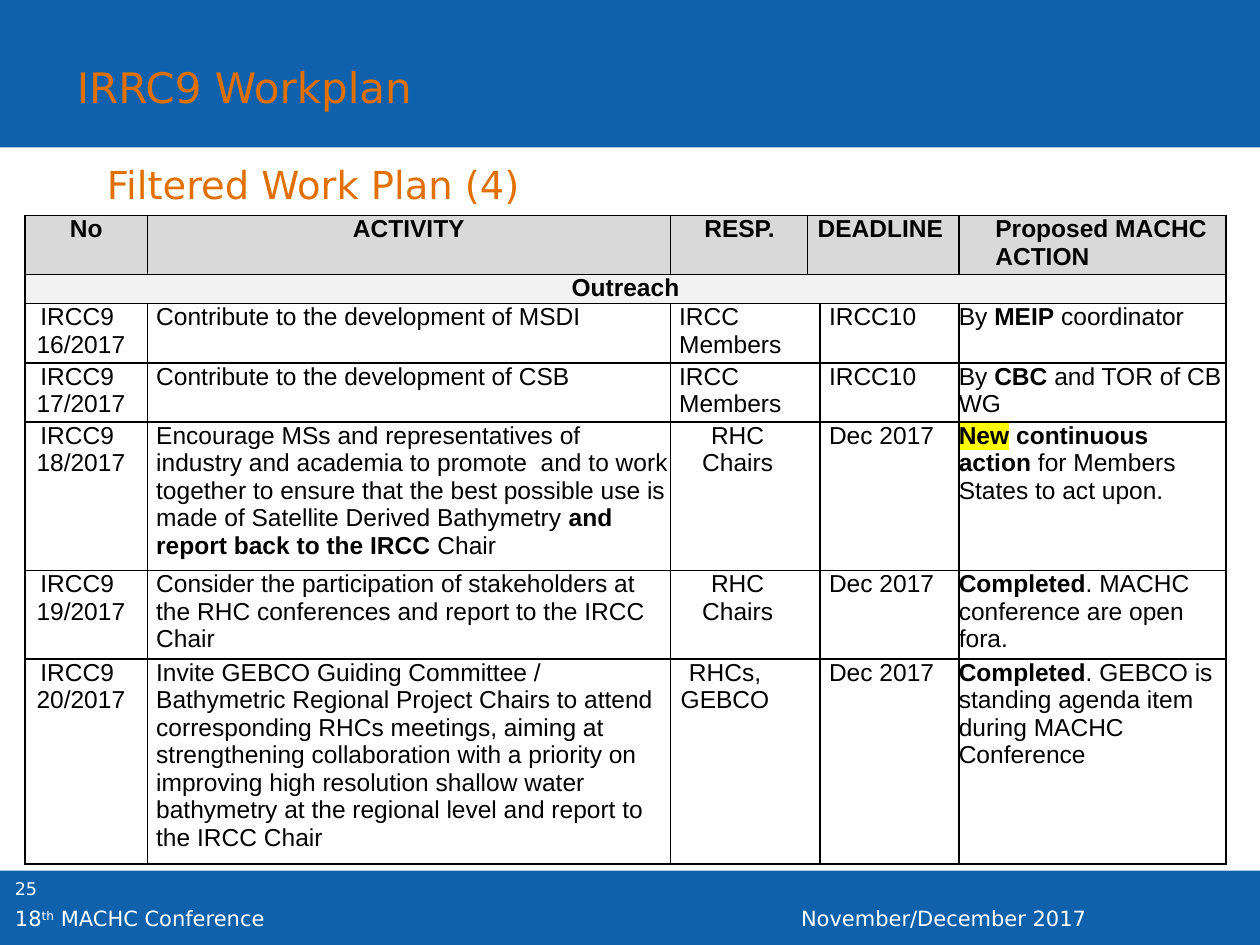
from lxml.etree import SubElement
from pptx import Presentation
from pptx.dml.color import RGBColor
from pptx.enum.shapes import MSO_SHAPE as Shape
from pptx.enum.text import MSO_ANCHOR as Anchor, PP_ALIGN as Align
from pptx.oxml.ns import qn
from pptx.util import Inches, Pt

BLUE, ORANGE, WHITE, BLACK = "0E61AA", "E17000", "FFFFFF", "000000"
GREY, PALE, YELLOW = "D9D9D9", "F2F2F2", "FFFF00"
HEAD, BODY = "DejaVu Sans", "Arial"

# Paragraph layouts: alignment, left margin, first-line indent, right margin
MID = (Align.CENTER, 0, 0, 0)
PLAIN = (Align.LEFT, 0, 0, 0)
NUM = (Align.LEFT, 0.09, 0.03, 0)
TEXT = (Align.LEFT, 0.07, 0, 0)
CHAIRS = (Align.CENTER, 0.05, 0, 0.17)
GEBCO = (Align.CENTER, 0.07, 0, 0.39)

COLS = [0.97, 4.15, 1.09, 0.1, 1.1, 2.12]
ROWS = [0.47, 0.23, 0.47, 0.47, 1.18, 0.7, 1.63]
HEADS = [
    (0, 0, "No", MID),
    (1, 1, "ACTIVITY", MID),
    (2, 2, "RESP.", (Align.LEFT, 0.27, 0, 0)),
    (3, 4, "DEADLINE", (Align.LEFT, 0.08, 0, 0)),
    (5, 5, "Proposed MACHC ACTION", (Align.LEFT, 0.29, 0, 0)),
]
# Number, activity runs, responsible paragraphs, their layout, deadline, action runs;
# a run is its text and its marks: b for bold, h for highlight
TASKS = [
    ("16", [("Contribute to the development of MSDI", "")],
     ["IRCC", "Members"], TEXT, "IRCC10",
     [("By ", ""), ("MEIP", "b"), (" coordinator", "")]),
    ("17", [("Contribute to the development of CSB", "")],
     ["IRCC", "Members"], TEXT, "IRCC10",
     [("By", ""), (" CBC", "b"), (" and TOR of CB WG", "")]),
    ("18", [("Encourage MSs and representatives of industry and academia to "
             "promote  and to work together to ensure that the best possible "
             "use is made of Satellite Derived Bathymetry ", ""),
            ("and report back to the IRCC ", "b"), ("Chair", "")],
     ["RHC Chairs"], CHAIRS, "Dec 2017",
     [("New", "bh"), (" ", ""), ("continuous action", "b"),
      (" for Members States to act upon.", "")]),
    ("19", [("Consider the participation of stakeholders "
             "at the RHC conferences and report to the IRCC Chair", "")],
     ["RHC Chairs"], CHAIRS, "Dec 2017",
     [("Completed", "b"), (". MACHC conference are open fora.", "")]),
    ("20", [("Invite GEBCO Guiding Committee / Bathymetric Regional Project "
             "Chairs to attend corresponding RHCs meetings, aiming at "
             "strengthening collaboration with a priority on improving high "
             "resolution shallow water bathymetry at the regional level and "
             "report to the IRCC Chair", "")],
     ["RHCs, GEBCO"], GEBCO, "Dec 2017",
     [("Completed", "b"),
      (". GEBCO is standing agenda item during MACHC Conference", "")]),
]


def rgb(code):
    return RGBColor.from_string(code)


class Deck:
    def __init__(self):
        self.prs = Presentation()
        self.prs.slide_width, self.prs.slide_height = Inches(10), Inches(7.5)
        self.slide = self.prs.slides.add_slide(self.prs.slide_layouts[5])
        self.shapes = self.slide.shapes

    def run(self, para, text, size, color, face, marks=""):
        """Add a run; marks: b bold, h highlight, s superscript."""
        run = para.add_run()
        run.text = text
        font = run.font
        font.size, font.name, font.bold = Pt(size), face, "b" in marks
        font.color.rgb = rgb(color)
        props = run._r.get_or_add_rPr()
        if "s" in marks:
            props.set("baseline", "30000")
        if "h" in marks:
            mark = SubElement(props, qn("a:highlight"))
            SubElement(mark, qn("a:srgbClr"), val=YELLOW)
            props.find(qn("a:solidFill")).addnext(mark)

    def band(self, top, high):
        box = self.shapes.add_shape(
            Shape.RECTANGLE, 0, Inches(top), self.prs.slide_width, Inches(high))
        box.shadow.inherit = False
        box.fill.solid()
        box.fill.fore_color.rgb = rgb(BLUE)
        box.line.fill.background()

    def fill(self, box, area, runs, size, color, wrap):
        """Place a text shape and write its one paragraph."""
        box.left, box.top, box.width, box.height = map(Inches, area)
        frame = box.text_frame
        frame.word_wrap = wrap
        frame.vertical_anchor = Anchor.TOP
        para = frame.paragraphs[0]
        para.alignment = Align.LEFT
        for text, marks in runs:
            self.run(para, text, size, color, HEAD, marks)

    def title(self, area, text, size):
        box = self.shapes.title
        self.shapes._spTree.append(box._element)  # in front of the bands
        self.fill(box, area, [(text, "")], size, ORANGE, False)

    def label(self, area, runs, size, color=WHITE, wrap=True):
        box = self.shapes.add_textbox(0, 0, 0, 0)
        self.fill(box, area, runs, size, color, wrap)

    def table(self, left, top, cols, rows):
        frame = self.shapes.add_table(
            len(rows), len(cols), Inches(left), Inches(top),
            Inches(sum(cols)), Inches(sum(rows)))
        grid = frame.table
        for col, wide in zip(grid.columns, cols):
            col.width = Inches(wide)
        for row, high in zip(grid.rows, rows):
            row.height = Inches(high)
        for cell in grid.iter_cells():
            cell.fill.background()
            self.edge(cell)
        return grid

    def edge(self, cell):
        props = cell._tc.get_or_add_tcPr()
        for spot, side in enumerate(("lnL", "lnR", "lnT", "lnB")):
            line = SubElement(props, qn("a:" + side), w=str(Pt(1)))
            paint = SubElement(line, qn("a:solidFill"))
            SubElement(paint, qn("a:srgbClr"), val=BLACK)
            props.insert(spot, line)

    def cell(self, grid, row, first, last, paras, form, back=None):
        """Fill the cell that covers columns first to last."""
        cell = grid.cell(row, first)
        if last > first:
            cell.merge(grid.cell(row, last))
        cell.margin_left = cell.margin_right = 0
        cell.margin_top = cell.margin_bottom = 0
        if back:
            cell.fill.solid()
            cell.fill.fore_color.rgb = rgb(back)
        align, left, indent, right = form
        frame = cell.text_frame
        for spot, runs in enumerate(paras):
            para = frame.add_paragraph() if spot else frame.paragraphs[0]
            para.alignment = align
            props = para._p.get_or_add_pPr()
            for name, size in (("marL", left), ("marR", right), ("indent", indent)):
                props.set(name, str(Inches(size)))
            for text, marks in runs:
                self.run(para, text, 14, BLACK, BODY, marks)


def main():
    deck = Deck()
    deck.band(6.91, 0.59)
    deck.band(0, 1.17)
    deck.label((0.02, 6.92, 0.78, 0.4), [("25", "")], 10)
    deck.label((6.26, 7.14, 3.74, 0.24), [("November/December 2017", "")], 12)
    deck.label((0.02, 7.14, 4.38, 0.24),
               [("18", ""), ("th", "s"), (" MACHC Conference", "")], 12)
    deck.label((0.75, 1.23, 3.61, 0.47), [("Filtered Work Plan (4)", "")],
               22, ORANGE, False)
    deck.title((0.51, 0.44, 2.97, 0.5), "IRRC9 Workplan", 24)

    grid = deck.table(0.2, 1.71, COLS, ROWS)
    for first, last, text, form in HEADS:
        deck.cell(grid, 0, first, last, [[(text, "b")]], form, GREY)
    deck.cell(grid, 1, 0, 5, [[("Outreach", "b")]], MID, PALE)
    for row, (num, work, who, form, due, action) in enumerate(TASKS, 2):
        deck.cell(grid, row, 0, 0, [[(f"IRCC9 {num}/2017", "")]], NUM)
        deck.cell(grid, row, 1, 1, [work], TEXT)
        deck.cell(grid, row, 2, 3, [[(name, "")] for name in who], form)
        deck.cell(grid, row, 4, 4, [[(due, "")]], TEXT)
        deck.cell(grid, row, 5, 5, [action], PLAIN)
    deck.prs.save("out.pptx")


if __name__ == "__main__":
    main()
